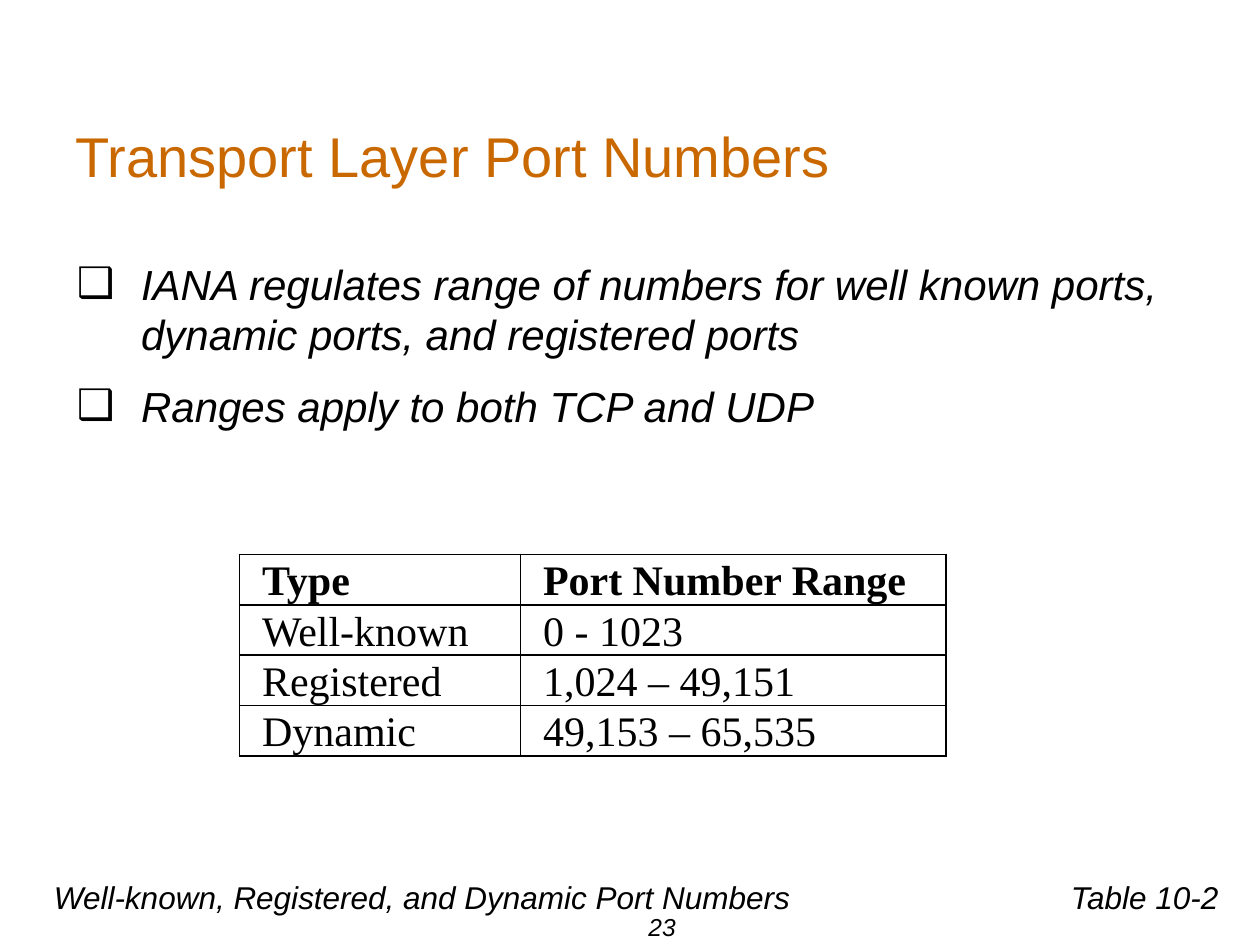
"""Build the slide on transport layer port numbers."""
from dataclasses import dataclass

import lxml.etree
import pptx
import pptx.dml.color
import pptx.enum.text
import pptx.oxml
import pptx.oxml.ns
import pptx.util

Inches = pptx.util.Inches
Align = pptx.enum.text.PP_ALIGN
Anchor = pptx.enum.text.MSO_ANCHOR

BLACK = "000000"
ORANGE = "CA6800"


@dataclass(frozen=True)
class Style:
    size: int
    name: str = "Arial"
    color: str = BLACK
    bold: bool = False
    italic: bool = False


@dataclass(frozen=True)
class Caption:
    text: str
    left: float
    top: float
    width: float
    height: float
    size: int = 18
    wrap: bool = True
    align: Align = Align.LEFT
    anchor: Anchor = Anchor.TOP


BULLETS = (
    "IANA regulates range of numbers for well known ports, dynamic ports, and registered ports",
    "Ranges apply to both TCP and UDP",
)
CAPTIONS = (
    Caption("Table 10-2", 8.4, 6.92, 1.38, 0.4, wrap=False),
    Caption("Well-known, Registered, and Dynamic Port Numbers", 0.33, 6.92, 9.17, 0.4),
    Caption("23", 3.67, 6.98, 3.17, 0.52, size=14, align=Align.CENTER, anchor=Anchor.BOTTOM),
)
PORT_ROWS = (
    ("Type", "Port Number Range"),
    ("Well-known", "0 - 1023"),
    ("Registered", "1,024 – 49,151"),
    ("Dynamic", "49,153 – 65,535"),
)
COLUMN_WIDTHS = (2.23, 3.38)
ROW_HEIGHT = 0.4


def set_attributes(target: object, values: dict) -> None:
    for name, value in values.items():
        setattr(target, name, value)


def rgb(color: str) -> pptx.dml.color.RGBColor:
    return pptx.dml.color.RGBColor.from_string(color)


def write(para, text: str, style: Style) -> None:
    span = para.add_run()
    span.text = text
    set_attributes(span.font, {
        "size": pptx.util.Pt(style.size),
        "name": style.name,
        "bold": style.bold,
        "italic": style.italic,
    })
    span.font.color.rgb = rgb(style.color)


def place(shape, left: float, top: float, width: float, height: float) -> None:
    set_attributes(shape, {
        "left": Inches(left),
        "top": Inches(top),
        "width": Inches(width),
        "height": Inches(height),
    })


def add_title(page, text: str) -> None:
    title = page.shapes.title
    place(title, 0.5, 0.92, 9, 0.63)
    title.text_frame.vertical_anchor = Anchor.MIDDLE
    para = title.text_frame.paragraphs[0]
    para.alignment = Align.LEFT
    write(para, text, Style(32, color=ORANGE))


def add_bullets(page, items: tuple[str, ...]) -> None:
    body = page.placeholders[1]
    place(body, 0.51, 2, 9, 2.16)
    frame = body.text_frame
    for index, item in enumerate(items):
        para = frame.add_paragraph() if index else frame.paragraphs[0]
        para.space_before = pptx.util.Pt(12)
        write(para, item, Style(24, italic=True))
        properties = para._p.get_or_add_pPr()
        properties.set("marL", str(Inches(0.51)))
        properties.set("indent", str(-Inches(0.51)))
        bullet = lxml.etree.SubElement(properties, pptx.oxml.ns.qn("a:buChar"))
        bullet.set("char", "❑")


def add_caption(page, caption: Caption) -> None:
    box = page.shapes.add_textbox(0, 0, 0, 0)
    place(box, caption.left, caption.top, caption.width, caption.height)
    set_attributes(box.text_frame, {
        "word_wrap": caption.wrap,
        "vertical_anchor": caption.anchor,
        "margin_bottom": Inches(0.03),
    })
    para = box.text_frame.paragraphs[0]
    para.alignment = caption.align
    write(para, caption.text, Style(caption.size, italic=True))


def add_borders(cell) -> None:
    properties = cell._tc.get_or_add_tcPr()
    namespace = pptx.oxml.ns.nsdecls("a")
    for index, side in enumerate("LRTB"):
        properties.insert(index, pptx.oxml.parse_xml(
            f'<a:ln{side} {namespace} w="{pptx.util.Pt(1)}"><a:solidFill>'
            f'<a:srgbClr val="{BLACK}"/></a:solidFill></a:ln{side}>'
        ))


def add_port_table(page, rows: tuple[tuple[str, str], ...]) -> None:
    frame = page.shapes.add_table(
        len(rows), len(COLUMN_WIDTHS), Inches(1.9), Inches(4.4),
        Inches(sum(COLUMN_WIDTHS)), Inches(ROW_HEIGHT * len(rows)),
    )
    table = frame.table
    set_attributes(table, {"first_row": False, "horz_banding": False})
    for column, width in zip(table.columns, COLUMN_WIDTHS):
        column.width = Inches(width)
    for row_index, row in enumerate(rows):
        for column_index, text in enumerate(row):
            cell = table.cell(row_index, column_index)
            set_attributes(cell, {
                "margin_left": Inches(0.18),
                "margin_right": Inches(0.18),
                "margin_top": 0,
                "margin_bottom": 0,
                "vertical_anchor": Anchor.BOTTOM,
            })
            cell.fill.background()
            add_borders(cell)
            style = Style(24, name="Times New Roman", bold=row_index == 0)
            write(cell.text_frame.paragraphs[0], text, style)


def main() -> None:
    deck = pptx.Presentation()
    set_attributes(deck, {"slide_width": Inches(10), "slide_height": Inches(7.5)})
    page = deck.slides.add_slide(deck.slide_layouts[1])
    add_title(page, "Transport Layer Port Numbers")
    add_bullets(page, BULLETS)
    add_port_table(page, PORT_ROWS)
    for caption in CAPTIONS:
        add_caption(page, caption)
    deck.save("out.pptx")


if __name__ == "__main__":
    main()
